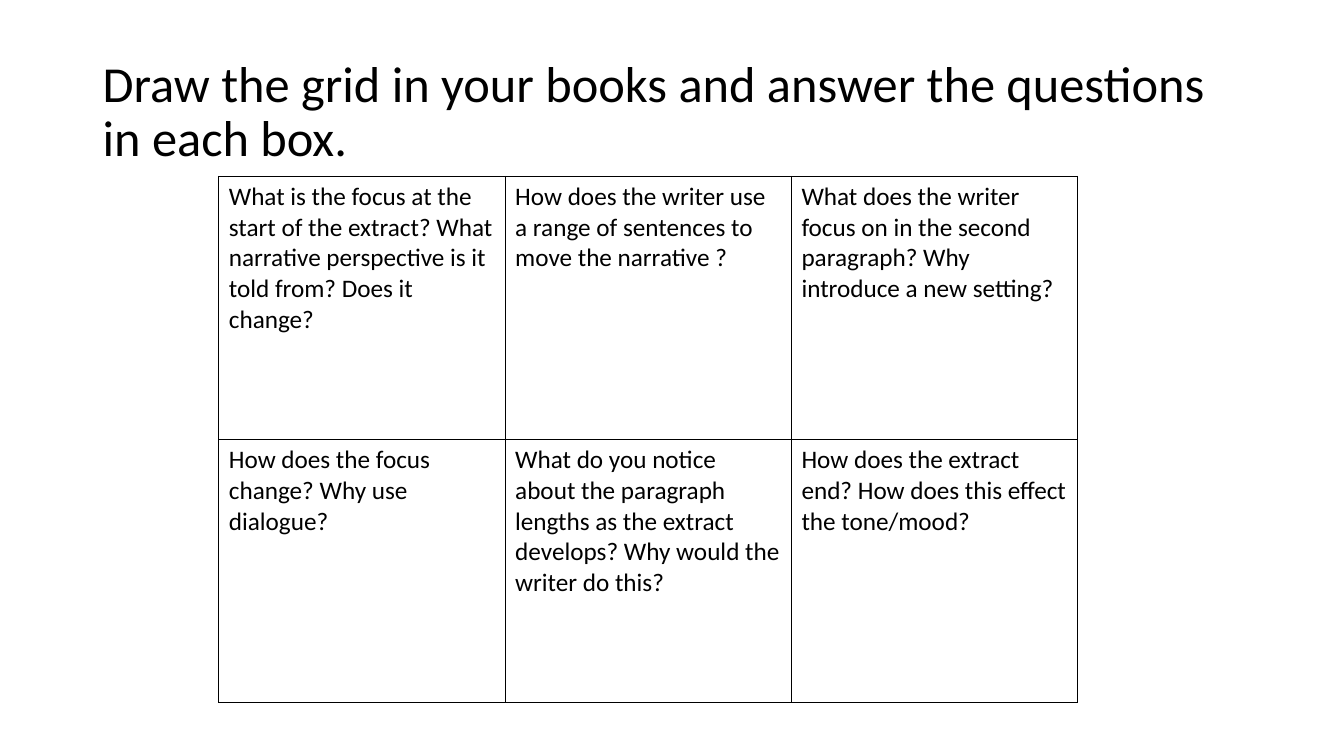
"""Build a slide with a title and a three-by-two grid of reading questions."""
from lxml.etree import SubElement
from pptx import Presentation
from pptx.dml.color import RGBColor
from pptx.enum.text import MSO_ANCHOR
from pptx.oxml.ns import qn
from pptx.util import Inches, Pt

TITLE = "Draw the grid in your books and answer the questions in each box."
QUESTIONS = [
    [
        "What is the focus at the start of the extract? What narrative perspective is it told from? Does it change?",
        "How does the writer use a range of sentences to move the narrative ?",
        "What does the writer focus on in the second paragraph? Why introduce a new setting?",
    ],
    [
        "How does the focus change? Why use dialogue?",
        "What do you notice about the paragraph lengths as the extract develops? Why would the writer do this?",
        "How does the extract end? How does this effect the tone/mood?",
    ],
]
THEME = {
    "font": "Calibri",
    "ink": "000000",
    "title": 36,
    "body": 18,
    "border": 1,
}
TITLE_BOX = (0.92, 0.4, 11.5, 1.45)
GRID_LEFT, GRID_TOP = 2.17, 1.75
COL_W, ROW_H = 2.84, 2.61


def write(tf, text, size, **paragraph_format):
    """Put one styled paragraph in a text frame."""
    tf.word_wrap = True
    p = tf.paragraphs[0]
    for name, value in paragraph_format.items():
        setattr(p, name, value)
    r = p.add_run()
    r.text = text
    for name, value in {"name": THEME["font"], "size": Pt(size)}.items():
        setattr(r.font, name, value)
    r.font.color.rgb = RGBColor.from_string(THEME["ink"])


def add_borders(cell):
    """Draw a thin solid line on all four sides of a cell."""
    props = cell._tc.get_or_add_tcPr()
    for side in ("a:lnL", "a:lnR", "a:lnT", "a:lnB"):
        line = SubElement(props, qn(side), w=str(Pt(THEME["border"])))
        fill = SubElement(line, qn("a:solidFill"))
        SubElement(fill, qn("a:srgbClr"), val=THEME["ink"])


def add_title(s):
    """Add the title text box."""
    tf = s.shapes.add_textbox(*map(Inches, TITLE_BOX)).text_frame
    tf.vertical_anchor = MSO_ANCHOR.MIDDLE
    write(tf, TITLE, THEME["title"], line_spacing=0.9)


def add_grid(s):
    """Add the table of questions."""
    rows, cols = len(QUESTIONS), len(QUESTIONS[0])
    box = (GRID_LEFT, GRID_TOP, cols * COL_W, rows * ROW_H)
    table = s.shapes.add_table(rows, cols, *map(Inches, box)).table
    for name in ("first_row", "horz_banding"):
        setattr(table, name, False)
    for i, row in enumerate(QUESTIONS):
        for j, question in enumerate(row):
            cell = table.cell(i, j)
            write(cell.text_frame, question, THEME["body"])
            add_borders(cell)
            cell.fill.background()


def main():
    """Create and save the presentation."""
    prs = Presentation()
    prs.slide_width, prs.slide_height = Inches(13.33), Inches(7.5)
    s = prs.slides.add_slide(prs.slide_layouts[6])
    add_title(s)
    add_grid(s)
    prs.save("out.pptx")


if __name__ == "__main__":
    main()
